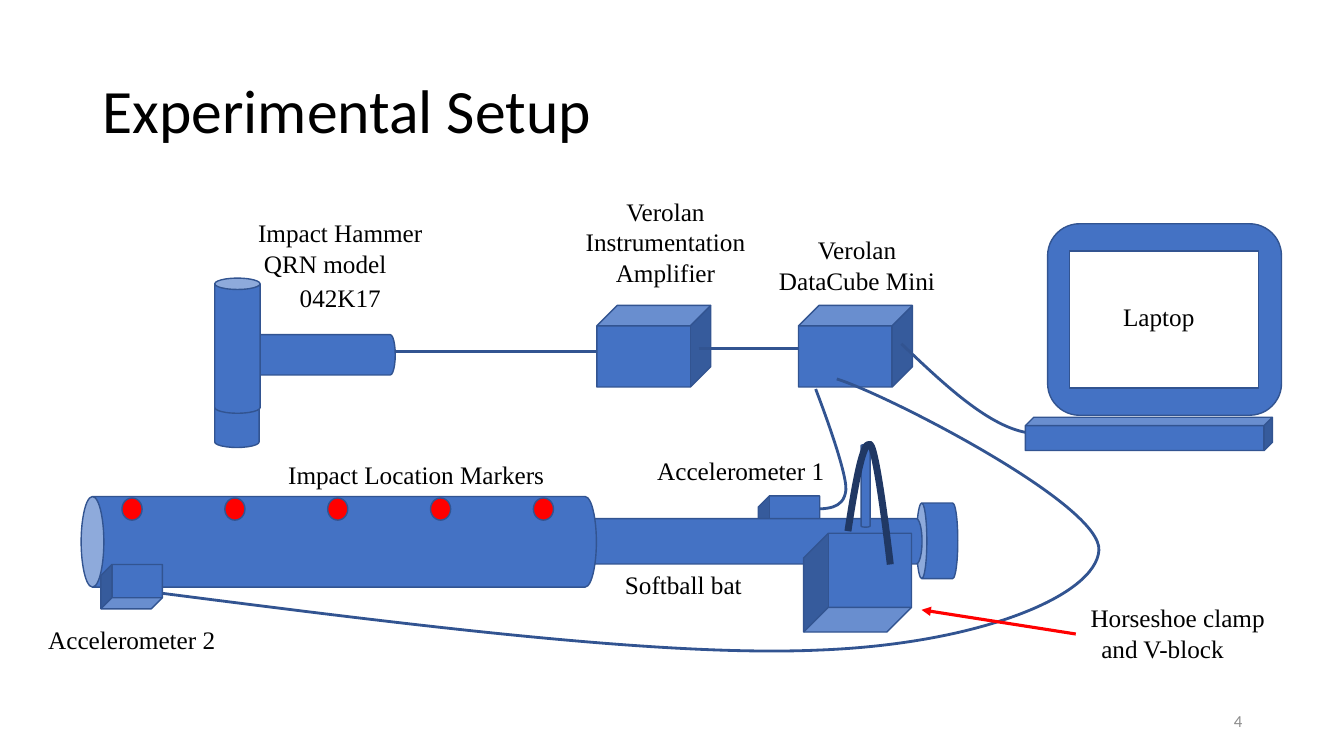
from dataclasses import dataclass

from lxml import etree
from pptx import Presentation
from pptx import util as u
from pptx.dml.color import RGBColor
from pptx.enum import shapes, text
from pptx.oxml.ns import qn

KIND = shapes.MSO_SHAPE
ALIGN = text.PP_ALIGN
MID = text.MSO_ANCHOR.MIDDLE


@dataclass(frozen=True)
class Theme:
    blue: str = "4472C4"
    edge: str = "325491"
    navy: str = "203864"
    red: str = "FF0000"
    white: str = "FFFFFF"
    black: str = "000000"
    gray: str = "8C8C8C"
    sans: str = "Calibri"
    serif: str = "Times New Roman"
    title: int = 44
    label: int = 18
    small: int = 12


T = Theme()


def box(vals):
    return [u.Inches(v) for v in vals]


def pen(line, color, width):
    line.color.rgb = RGBColor.from_string(color)
    line.width = u.Pt(width)


def solid(slide, kind, at, fill=T.blue, turn=0):
    """Add an outlined preset shape."""
    shape = slide.shapes.add_shape(kind, *box(at))
    shape.shadow.inherit = False
    shape.rotation = turn
    shape.fill.solid()
    shape.fill.fore_color.rgb = RGBColor.from_string(fill)
    pen(shape.line, T.edge, 1)


def wire(slide, start, end, color=T.edge, width=2, arrow=False):
    """Add a straight line, with an arrowhead at its end if asked."""
    line = slide.shapes.add_connector(
        shapes.MSO_CONNECTOR.STRAIGHT, *box(start + end))
    pen(line.line, color, width)
    if arrow:
        ln = line._element.spPr.find(qn("a:ln"))
        etree.SubElement(ln, qn("a:tailEnd"), type="triangle")
    etree.SubElement(line._element.spPr, qn("a:effectLst"))


def curve(slide, start, points, color=T.edge, width=2):
    """Add a cubic path; each three points make one segment."""
    form = slide.shapes.build_freeform(*box(start), scale=1.0)
    form.add_line_segments([box(p) for p in points], close=False)
    shape = form.convert_to_shape()
    shape.shadow.inherit = False
    shape.fill.background()
    pen(shape.line, color, width)
    legs = list(shape._element.iter(qn("a:lnTo")))
    for first, *rest in zip(legs[::3], legs[1::3], legs[2::3]):
        first.tag = qn("a:cubicBezTo")
        for leg in rest:
            first.append(leg[0])
            leg.getparent().remove(leg)


def write(slide, at, *lines, size=T.label, font=T.serif, color=T.black,
          align=ALIGN.LEFT, indent=0.0, after=3, anchor=text.MSO_ANCHOR.TOP,
          space=1.0):
    """Add a text box with one paragraph per line."""
    frame = slide.shapes.add_textbox(*box(at)).text_frame
    frame.word_wrap = True
    frame.vertical_anchor = anchor
    for i, words in enumerate(lines):
        para = frame.add_paragraph() if i else frame.paragraphs[0]
        para.alignment = align
        para.line_spacing = space
        para.space_after = u.Pt(after)
        if indent:
            para._p.get_or_add_pPr().set("indent", str(u.Inches(indent)))
        run = para.add_run()
        run.text = words
        run.font.size = u.Pt(size)
        run.font.name = font
        run.font.color.rgb = RGBColor.from_string(color)


def chain(slide):
    """Hammer, amplifier, interface and laptop, with their wires."""
    wire(slide, (3.78, 3.49), (6.12, 3.49))
    solid(slide, KIND.CUBE, (5.92, 3.03, 1.13, 0.81))
    solid(slide, KIND.CAN, (2.93, 2.73, 0.4, 1.58), turn=270)
    solid(slide, KIND.CAN, (2.13, 3.88, 0.44, 0.56))
    solid(slide, KIND.CAN, (2.13, 2.76, 0.45, 1.34))
    wire(slide, (6.93, 3.46), (8.19, 3.46))
    solid(slide, KIND.CUBE, (7.92, 3.03, 1.13, 0.81))
    curve(slide, (8.01, 5.05), [(8.19, 5.05), (8.37, 5.06), (8.39, 4.86),
                                (8.4, 4.66), (8.09, 3.86), (8.09, 3.86)])
    curve(slide, (1.4, 5.86), [(3.97, 6.19), (6.54, 6.52), (8.12, 6.45),
                               (9.71, 6.39), (10.87, 5.91), (10.9, 5.46),
                               (10.93, 5.01), (8.81, 3.92), (8.3, 3.76)])
    curve(slide, (8.94, 3.41), [(9.4, 3.85), (9.86, 4.28), (10.26, 4.3)])
    solid(slide, KIND.ROUNDED_RECTANGLE, (10.39, 2.22, 2.32, 1.9))
    solid(slide, KIND.CUBE, (10.17, 4.14, 2.45, 0.33))
    solid(slide, KIND.RECTANGLE, (10.61, 2.49, 1.87, 1.36), fill=T.white)


def bat(slide):
    """Bat with accelerometers, impact markers and clamp."""
    solid(slide, KIND.CUBE, (7.52, 4.92, 0.61, 0.44), turn=180)
    for part in ((8.92, 5.16, 0.75, 0.41), (6.98, 3.43, 0.45, 3.88),
                 (2.91, 2.82, 0.9, 5.11)):
        solid(slide, KIND.CAN, part, turn=270)
    solid(slide, KIND.CUBE, (1, 5.6, 0.61, 0.44), turn=180)
    for i in range(5):
        solid(slide, KIND.OVAL, (1.21 + 1.02 * i, 4.94, 0.2, 0.22), fill=T.red)
    solid(slide, KIND.CUBE, (7.97, 5.29, 1.07, 0.98), turn=180)
    solid(slide, KIND.CAN, (8.54, 4.41, 0.09, 0.82))
    curve(slide, (8.41, 5.27), [(8.48, 4.81), (8.56, 4.36), (8.63, 4.41),
                                (8.7, 4.46), (8.83, 5.6), (8.83, 5.6)],
          color=T.navy, width=5)


def labels(slide):
    """Names of the parts, and the arrow to the clamp."""
    mid = ALIGN.CENTER
    write(slide, (2.1, 2.11, 2.25, 1.19), "Impact Hammer QRN model", "042K17",
          align=mid, indent=0.3)
    write(slide, (5.34, 1.9, 2.52, 1.18), "Verolan Instrumentation Amplifier",
          align=mid, after=0)
    write(slide, (7.61, 2.28, 1.78, 0.98), "Verolan DataCube Mini", align=mid)
    write(slide, (10.74, 2.94, 2.11, 0.76), "Laptop", indent=0.3)
    for at, words in (
        ((0.08, 6.14, 3.34, 0.82), "Accelerometer 2"),
        ((6.12, 4.47, 3.34, 0.82), "Accelerometer 1"),
        ((5.8, 5.6, 3.34, 0.82), "Softball bat"),
        ((2.46, 4.51, 4.36, 0.91), "Impact Location Markers"),
    ):
        write(slide, at, words, align=ALIGN.JUSTIFY, indent=0.3)
    write(slide, (10.39, 5.93, 2.28, 1.08), "Horseshoe clamp and V-block",
          align=mid, indent=0.3)
    wire(slide, (10.67, 6.29), (9.14, 6.05), color=T.red, width=2.25, arrow=True)


def main():
    deck = Presentation()
    deck.slide_width, deck.slide_height = box((13.33, 7.5))
    slide = deck.slides.add_slide(deck.slide_layouts[6])
    # Title
    write(slide, (0.92, 0.4, 11.5, 1.45), "Experimental Setup", size=T.title,
          font=T.sans, after=0, anchor=MID, space=0.9)
    # Diagram
    chain(slide)
    bat(slide)
    labels(slide)
    # Slide number
    write(slide, (9.42, 6.95, 3, 0.4), "4", size=T.small, font=T.sans,
          color=T.gray, align=ALIGN.RIGHT, after=0, anchor=MID)
    deck.save("out.pptx")


if __name__ == "__main__":
    main()
